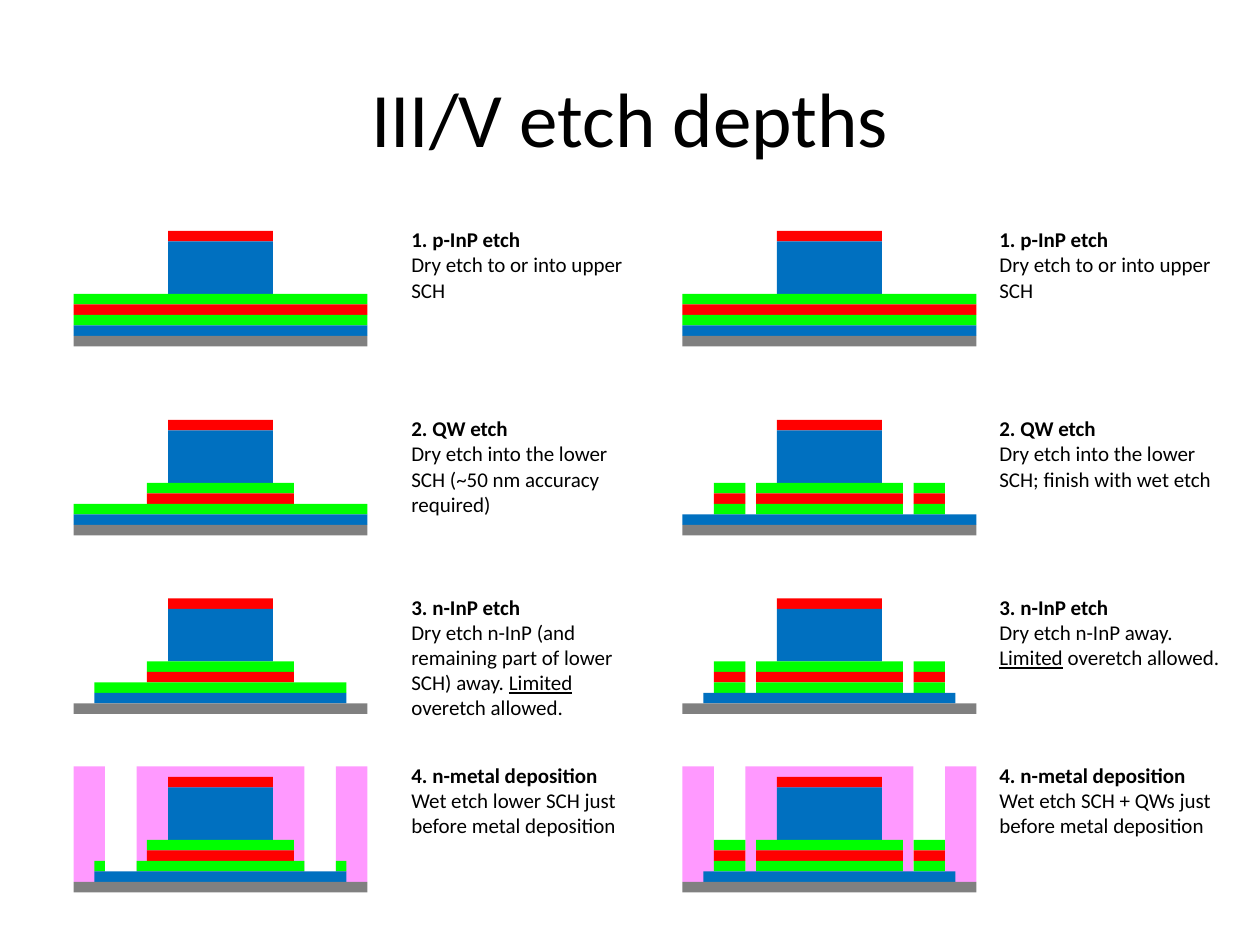
from dataclasses import dataclass

from pptx import Presentation
from pptx.dml.color import RGBColor
from pptx.enum.shapes import MSO_SHAPE
from pptx.enum.text import MSO_ANCHOR, MSO_AUTO_SIZE, PP_ALIGN
from pptx.util import Inches, Pt


@dataclass(frozen=True)
class Theme:
    font: str = "Calibri"
    title_size: int = 44
    body_size: int = 12
    text: str = "000000"
    inp: str = "0070C0"
    sch: str = "00FF00"
    well: str = "FF0000"
    substrate: str = "808080"
    resist: str = "FF99FF"


THEME = Theme()
UNITS_PER_INCH = 12  # grid of 120 columns by 90 rows

# Layer name: (first row below the mesa top, rows high, colour)
LAYERS = {
    "resist": (-1, 11, THEME.resist),
    "p-contact": (0, 1, THEME.well),
    "p-InP": (1, 5, THEME.inp),
    "upper SCH": (6, 1, THEME.sch),
    "wells": (7, 1, THEME.well),
    "lower SCH": (8, 1, THEME.sch),
    "n-InP": (9, 1, THEME.inp),
    "substrate": (10, 1, THEME.substrate),
}

# Spans across a section: (first column, columns wide)
FULL = [(0, 28)]
MESA = [(9, 10)]
WELL = [(7, 14)]
N_ISLAND = [(2, 24)]
WELL_AND_SIDES = [(3, 3), (7, 14), (22, 3)]
RESIST = [(0, 3), (6, 16), (25, 3)]
OPENED_SCH = [(2, 1), (6, 16), (25, 1)]


def stack(upper, lower, n_inp, resist=()):
    """Map each layer to its spans; upper covers the upper SCH and the wells."""
    return {
        "resist": resist, "p-contact": MESA, "p-InP": MESA,
        "upper SCH": upper, "wells": upper, "lower SCH": lower,
        "n-InP": n_inp, "substrate": FULL,
    }


# Mesa top and caption top of each process step
STEP_ROWS = [(22, 21), (40, 39), (57, 56), (74, 72)]
HEADINGS = ["1. p-InP etch", "2. QW etch", "3. n-InP etch", "4. n-metal deposition"]

# Each flow: section column, caption column, steps of (stack, caption, lines).
# Underscores enclose underlined words.
FLOWS = [
    (7, 38, [
        (stack(FULL, FULL, FULL), "Dry etch to or into upper SCH", 3),
        (stack(WELL, FULL, FULL),
         "Dry etch into the lower SCH (~50 nm accuracy required)", 4),
        (stack(WELL, N_ISLAND, N_ISLAND),
         "Dry etch n-InP (and remaining part of lower SCH) away. "
         "_Limited_ overetch allowed.", 5),
        (stack(WELL, OPENED_SCH, N_ISLAND, RESIST),
         "Wet etch lower SCH just before metal deposition", 3),
    ]),
    (65, 94, [
        (stack(FULL, FULL, FULL), "Dry etch to or into upper SCH", 3),
        (stack(WELL_AND_SIDES, WELL_AND_SIDES, FULL),
         "Dry etch into the lower SCH; finish with wet etch", 3),
        (stack(WELL_AND_SIDES, WELL_AND_SIDES, N_ISLAND),
         "Dry etch n-InP away. _Limited_ overetch allowed.", 3),
        (stack(WELL_AND_SIDES, WELL_AND_SIDES, N_ISLAND, RESIST),
         "Wet etch SCH + QWs just before metal deposition", 3),
    ]),
]


def grid(units):
    return Inches(units / UNITS_PER_INCH)


def style_span(span, size, bold=False, underline=False):
    span.font.name = THEME.font
    span.font.size = Pt(size)
    span.font.color.rgb = RGBColor.from_string(THEME.text)
    span.font.bold = bold
    span.font.underline = underline


def add_title(page, text, left, top, width, height):
    box = page.shapes.add_textbox(left, top, width, height)
    frame = box.text_frame
    frame.word_wrap = True
    frame.vertical_anchor = MSO_ANCHOR.MIDDLE
    frame.text = text
    para = frame.paragraphs[0]
    para.alignment = PP_ALIGN.CENTER
    style_span(para.runs[0], THEME.title_size)


def add_section(page, left, top, layers):
    """Draw one grouped cross-section, with top at the top of the mesa."""
    group = page.shapes.add_group_shape()
    for name, spans in layers.items():
        row, rows, colour = LAYERS[name]
        for column, columns in spans:
            layer = group.shapes.add_shape(
                MSO_SHAPE.RECTANGLE, grid(left + column), grid(top + row),
                grid(columns), grid(rows))
            layer.shadow.inherit = False
            layer.fill.solid()
            layer.fill.fore_color.rgb = RGBColor.from_string(colour)
            layer.line.fill.background()


def add_caption(page, left, top, heading, body, lines):
    box = page.shapes.add_textbox(
        grid(left), grid(top), grid(24), Inches(0.11 + 0.2 * lines))
    frame = box.text_frame
    frame.word_wrap = True
    frame.auto_size = MSO_AUTO_SIZE.SHAPE_TO_FIT_TEXT
    frame.text = heading
    style_span(frame.paragraphs[0].runs[0], THEME.body_size, bold=True)
    para = frame.add_paragraph()
    for index, part in enumerate(body.split("_")):
        span = para.add_run()
        span.text = part
        style_span(span, THEME.body_size, underline=index % 2 == 1)


def add_flow(page, section_left, caption_left, steps):
    for rows, heading, step in zip(STEP_ROWS, HEADINGS, steps):
        mesa_top, caption_top = rows
        layers, body, lines = step
        add_section(page, section_left, mesa_top, layers)
        add_caption(page, caption_left, caption_top, heading, body, lines)


def main():
    deck = Presentation()
    deck.slide_width, deck.slide_height = Inches(10), Inches(7.5)
    page = deck.slides.add_slide(deck.slide_layouts[6])
    add_title(page, "III/V etch depths",
              Inches(0.5), Inches(0.3), Inches(9), Inches(1.25))
    for flow in FLOWS:
        add_flow(page, *flow)
    deck.save("out.pptx")


if __name__ == "__main__":
    main()
